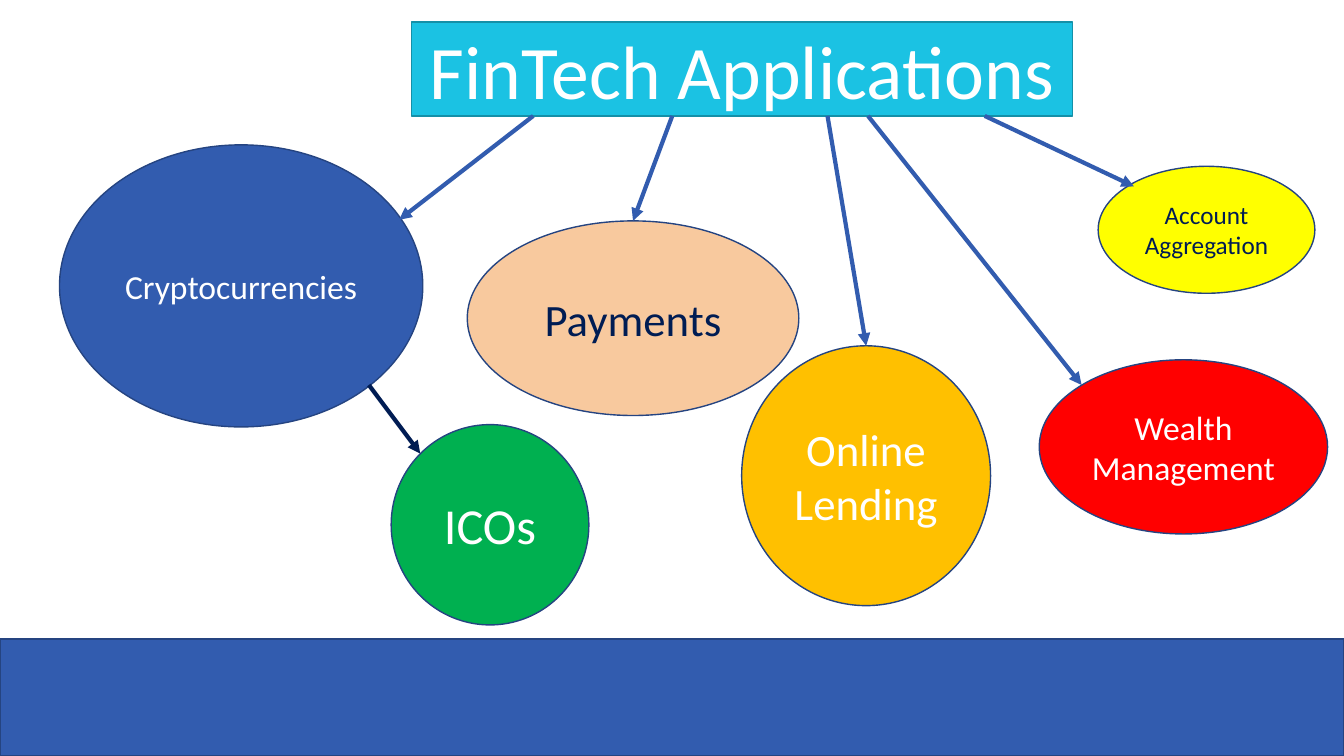
from lxml.etree import SubElement
from pptx import Presentation
from pptx.dml.color import RGBColor
from pptx.enum.shapes import MSO_CONNECTOR as Connector, MSO_SHAPE as Shape
from pptx.enum.text import MSO_ANCHOR as Anchor, MSO_AUTO_SIZE as AutoSize, PP_ALIGN as Align
from pptx.oxml.ns import qn
from pptx.util import Pt

FONT = "Calibri"
WHITE = RGBColor(0xFF, 0xFF, 0xFF)
NAVY = RGBColor(0x00, 0x1C, 0x53)
BLUE = RGBColor(0x32, 0x5C, 0xAF)
DARK_BLUE = RGBColor(0x25, 0x44, 0x81)
CYAN = RGBColor(0x1B, 0xC2, 0xE3)
DARK_CYAN = RGBColor(0x14, 0x90, 0xA8)
AMBER = RGBColor(0xFF, 0xC0, 0x00)
GREEN = RGBColor(0x00, 0xB0, 0x50)
RED = RGBColor(0xFF, 0x00, 0x00)
YELLOW = RGBColor(0xFF, 0xFF, 0x00)
PEACH = RGBColor(0xF8, 0xC9, 0x9E)

TITLE_BOTTOM = 82.8

APPLICATIONS = [
    ("Cryptocurrencies", (42.5, 103.5, 259.5, 201.5), BLUE, WHITE, 24),
    ("Online Lending", (529.8, 247, 177.8, 185.6), AMBER, WHITE, 32),
    ("ICOs", (279.4, 303.3, 141.2, 143.1), GREEN, WHITE, 36),
    ("Wealth Management", (742.3, 257, 206, 124.4), RED, WHITE, 24),
    ("Account Aggregation", (784.4, 118.8, 154.8, 90.7), YELLOW, NAVY, 18),
    ("Payments", (333.8, 157.8, 236.8, 139), PEACH, NAVY, 32),
]


def paint(shape, fill, outline):
    shape.fill.solid()
    shape.fill.fore_color.rgb = fill
    shape.line.color.rgb = outline
    shape.line.width = Pt(1)


def write(shape, text, size, color):
    frame = shape.text_frame
    frame.word_wrap = True
    frame.auto_size = AutoSize.NONE
    frame.vertical_anchor = Anchor.MIDDLE
    paragraph = frame.paragraphs[0]
    paragraph.alignment = Align.CENTER
    run = paragraph.add_run()
    run.text = text
    run.font.name = FONT
    run.font.size = Pt(size)
    run.font.color.rgb = color


def add_box(slide, kind, bounds, fill):
    shape = slide.shapes.add_shape(kind, *map(Pt, bounds))
    shape.shadow.inherit = False
    paint(shape, fill, DARK_BLUE)
    return shape


def add_application(slide, text, bounds, fill, color, size):
    shape = add_box(slide, Shape.OVAL, bounds, fill)
    write(shape, text, size, color)
    return shape


def add_arrow(slide, start, end, color=BLUE):
    arrow = slide.shapes.add_connector(Connector.STRAIGHT, *map(Pt, start + end))
    arrow.line.color.rgb = color
    arrow.line.width = Pt(3)
    SubElement(arrow.line._get_or_add_ln(), qn("a:tailEnd"), type="triangle")
    SubElement(arrow._element.spPr, qn("a:effectLst"))
    return arrow


def format_title(title):
    title.left, title.top = Pt(293.8), Pt(15.8)
    title.width, title.height = Pt(472.3), Pt(67)
    paint(title, CYAN, DARK_CYAN)
    write(title, "FinTech Applications", 54, WHITE)


def main():
    presentation = Presentation()
    presentation.slide_width, presentation.slide_height = Pt(960), Pt(540)
    slide = presentation.slides.add_slide(presentation.slide_layouts[5])
    format_title(slide.shapes.title)
    add_box(slide, Shape.RECTANGLE, (0, 456.5, 960, 83.5), BLUE)
    ovals = {row[0]: add_application(slide, *row) for row in APPLICATIONS}

    for start_x, end in [(380.9, (285.1, 157)), (620, (772.6, 275)), (703.4, (810, 133.2))]:
        add_arrow(slide, (start_x, TITLE_BOTTOM), end)
    for start_x, name in [(480.2, "Payments"), (591.1, "Online Lending")]:
        arrow = add_arrow(slide, (start_x, TITLE_BOTTOM), (start_x, 150))
        arrow.end_connect(ovals[name], 0)
    add_arrow(slide, (263.5, 275), (300.2, 324), NAVY)

    presentation.save("out.pptx")


if __name__ == "__main__":
    main()
